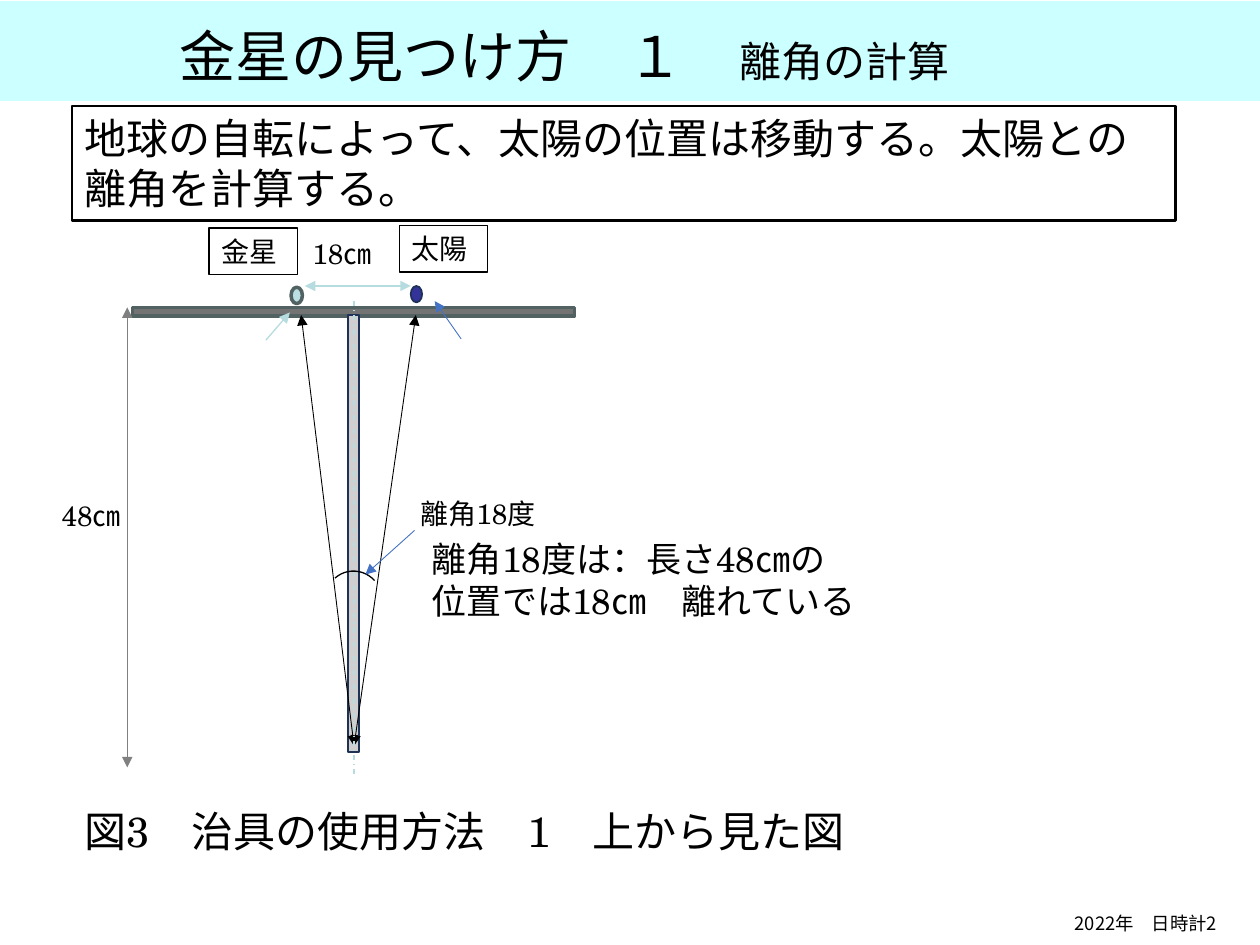
from dataclasses import dataclass

from lxml import etree
from pptx import Presentation
from pptx.dml.color import RGBColor
from pptx.enum.dml import MSO_LINE
from pptx.enum.shapes import MSO_CONNECTOR, MSO_SHAPE
from pptx.enum.text import MSO_ANCHOR, PP_ALIGN
from pptx.oxml.ns import qn
from pptx.util import Inches, Pt

RECT, OVAL, ARC = MSO_SHAPE.RECTANGLE, MSO_SHAPE.OVAL, MSO_SHAPE.ARC
STRAIGHT, DASH_DOT = MSO_CONNECTOR.STRAIGHT, MSO_LINE.DASH_DOT
LEFT, CENTER, JUSTIFY = PP_ALIGN.LEFT, PP_ALIGN.CENTER, PP_ALIGN.JUSTIFY
TOP, MIDDLE = MSO_ANCHOR.TOP, MSO_ANCHOR.MIDDLE

BLACK = RGBColor(0x00, 0x00, 0x00)
BAND = RGBColor(0xCC, 0xFF, 0xFF)
GRAY = RGBColor(0x80, 0x80, 0x80)
BAR = RGBColor(0x73, 0x73, 0x73)
BAR_EDGE = RGBColor(0x52, 0x62, 0x63)
POST = RGBColor(0xD0, 0xCE, 0xCE)
NAVY = RGBColor(0x1E, 0x32, 0x56)
VENUS = RGBColor(0xBB, 0xE0, 0xE3)
SUN = RGBColor(0x33, 0x33, 0x99)
PALE = RGBColor(0xB6, 0xDC, 0xDF)
BLUE = RGBColor(0x44, 0x72, 0xC4)

SANS, GOTHIC, SERIF = "Arial", "Noto Sans CJK JP", "TeX Gyre Schola"
COLUMNS, ROWS = 100, 75
CELL = Inches(0.1)


@dataclass
class Box:
    """An area of the slide, measured in grid cells."""
    x: float
    y: float
    w: float
    h: float

    def inner(self, x, y, w, h):
        return Box(self.x + x, self.y + y, w, h)

    def emu(self):
        return [round(v * CELL) for v in (self.x, self.y, self.w, self.h)]


def style_font(font, size, name):
    font.size, font.name = Pt(size), name
    font.color.rgb = BLACK
    east_asian = etree.SubElement(font._element, qn("a:ea"))
    east_asian.set("typeface", name)


def style_line(line, color, width):
    line.color.rgb = color
    line.width = Pt(width)


def add_outline(slide, kind, box, color, width, fill=None):
    shape = slide.shapes.add_shape(kind, *box.emu())
    shape.shadow.inherit = False
    if fill is None:
        shape.fill.background()
    else:
        shape.fill.solid()
        shape.fill.fore_color.rgb = fill
    if color is None:
        shape.line.fill.background()
    else:
        style_line(shape.line, color, width)
    return shape


def write(shape, lines, size, name=SERIF, align=JUSTIFY, anchor=TOP):
    frame = shape.text_frame
    frame.word_wrap = True
    frame.vertical_anchor = anchor
    for index, line in enumerate(lines):
        paragraph = frame.paragraphs[0] if index == 0 else frame.add_paragraph()
        paragraph.alignment = align
        run = paragraph.add_run()
        run.text = line
        style_font(run.font, size, name)
    return frame


def add_text(slide, box, lines, size, **style):
    return write(slide.shapes.add_textbox(*box.emu()), lines, size, **style)


def add_line(slide, box, start, end, color, width, head=False, tail=False):
    """Draw a line between two points of the box, with optional arrowheads."""
    ends = [box.inner(x, y, 0, 0).emu()[:2] for x, y in (start, end)]
    connector = slide.shapes.add_connector(STRAIGHT, *ends[0], *ends[1])
    style_line(connector.line, color, width)
    properties = connector._element.spPr
    stroke = properties.find(qn("a:ln"))
    for wanted, tag in ((head, "a:headEnd"), (tail, "a:tailEnd")):
        if wanted:
            etree.SubElement(stroke, qn(tag)).set("type", "triangle")
    etree.SubElement(properties, qn("a:effectLst"))
    return connector


def title_band(slide, box):
    add_outline(slide, RECT, box, None, 0, BAND)
    frame = add_text(slide, box.inner(2.3, 0.3, 85, 7.9), ["金星の見つけ方　１　"], 32,
                     name=GOTHIC, align=CENTER, anchor=MIDDLE)
    subtitle = frame.paragraphs[0].add_run()
    subtitle.text = "離角の計算"
    style_font(subtitle.font, 24, GOTHIC)


def statement(slide, box):
    write(add_outline(slide, RECT, box, BLACK, 1.25),
          ["地球の自転によって、太陽の位置は移動する。太陽との離角を計算する。"],
          24, name=SANS, align=LEFT)


def jig(slide, box):
    """Draw the T-shaped jig seen from above, with both sight lines."""
    axis, bar_top, post_top = 24.2, 6.5, 7.1
    eye = (axis, 41.3)

    add_outline(slide, RECT, box.inner(6.6, bar_top, 35.1, 0.7), BAR_EDGE, 2, BAR)
    add_outline(slide, RECT, box.inner(axis - 0.5, post_top, 0.9, 34.7), NAVY, 1, POST)
    add_line(slide, box, (6.2, bar_top), (6.2, 43), GRAY, 0.75, head=True, tail=True)
    for sight_x in (20, 29.1):
        add_line(slide, box, (sight_x, post_top), eye, BLACK, 0.5, head=True, tail=True)

    add_outline(slide, OVAL, box.inner(19.2, 4.9, 0.9, 1.3), BAR_EDGE, 2, VENUS)
    add_outline(slide, OVAL, box.inner(28.7, 4.8, 0.9, 1.3), NAVY, 1, SUN)
    add_line(slide, box, (17.2, 9.1), (19.1, 6.9), PALE, 0.75, tail=True)
    add_line(slide, box, (32.7, 9), (30.6, 6), BLUE, 0.5, tail=True)

    center_line = add_line(slide, box, (axis, 6), (axis, 43.6), PALE, 0.75)
    center_line.line.dash_style = DASH_DOT
    angle = add_outline(slide, ARC, box.inner(22, 27.4, 4.4, 4.5), BLACK, 0.75)
    angle.rotation = 317.9
    add_line(slide, box, (29, 24.2), (25.1, 27.7), BLUE, 0.5, tail=True)
    add_line(slide, box, (20.3, 4.8), (28.7, 4.8), PALE, 0.75, head=True, tail=True)


def jig_labels(slide, box):
    for name, x, y in (("金星", 12.7, 0.2), ("太陽", 27.8, 0)):
        write(add_outline(slide, RECT, box.inner(x, y, 7, 3.7), BLACK, 0.75), [name], 16)
    for label, x, y, width in (("48㎝", 0, 21.2, 8.6), ("離角18度", 28.5, 21, 14.7)):
        add_text(slide, box.inner(x, y, width, 3.7), [label], 16)
    spacing = add_text(slide, box.inner(20.9, 0.4, 7.8, 3.7), ["18㎝"], 16)
    spacing.margin_left = 0
    add_text(slide, box.inner(29.4, 24.3, 37.4, 7.7),
             ["離角18度は：長さ48㎝の", "位置では18㎝　離れている"], 20)


def main():
    deck = Presentation()
    deck.slide_width, deck.slide_height = COLUMNS * CELL, ROWS * CELL
    slide = deck.slides.add_slide(deck.slide_layouts[6])
    diagram = Box(3.9, 17.9, 66.8, 43.6)

    title_band(slide, Box(0, 0.1, COLUMNS, 7.9))
    statement(slide, Box(5.7, 8.4, 87.6, 9.1))
    jig(slide, diagram)
    jig_labels(slide, diagram)
    add_text(slide, Box(5.7, 63.4, 67.9, 5), ["図3　治具の使用方法　1　上から見た図"], 24)
    add_text(slide, Box(81.6, 71.9, 18.7, 2.2), ["2022年　日時計2"], 10.5,
             name=GOTHIC, align=CENTER)
    deck.save("out.pptx")


if __name__ == "__main__":
    main()
